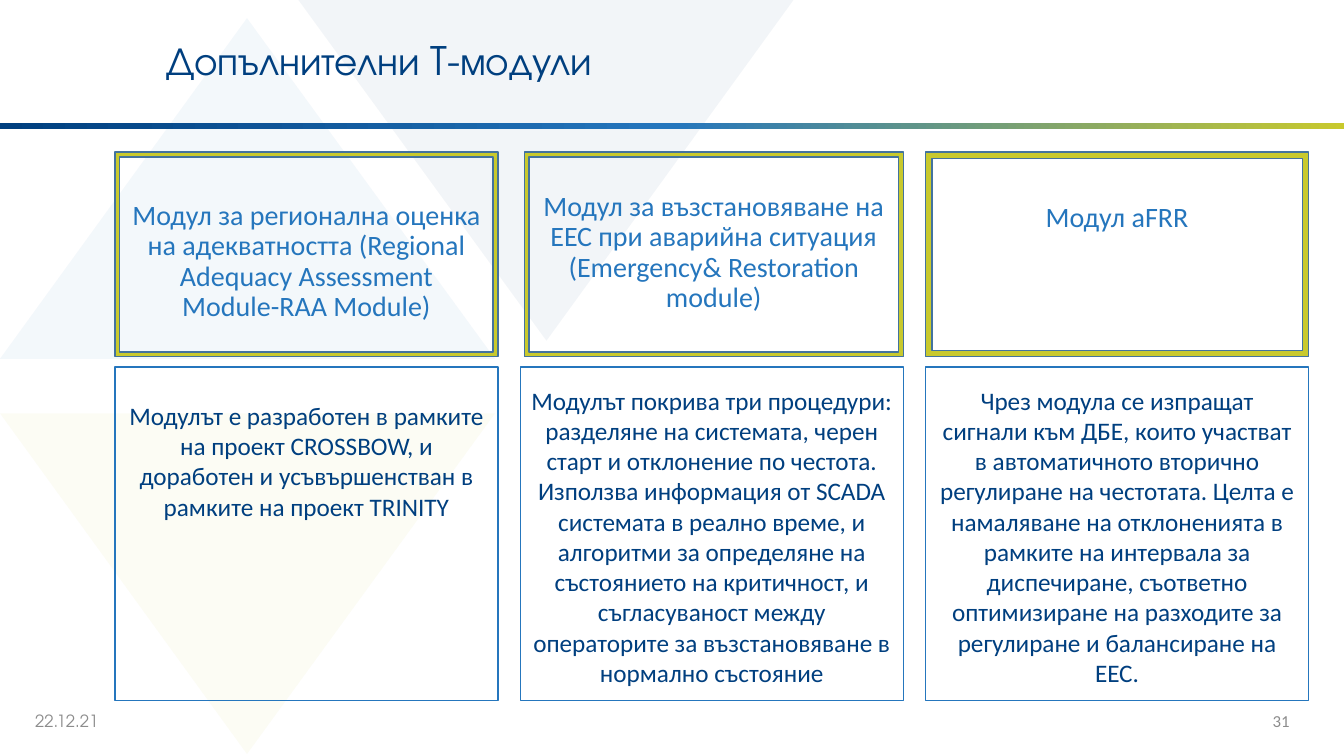
"""Build the slide on additional T-modules: three framed headings over three descriptions."""
from lxml.etree import SubElement
from pptx import Presentation
from pptx.dml.color import RGBColor
from pptx.enum.shapes import MSO_SHAPE as SHAPE
from pptx.enum.text import MSO_ANCHOR as ANCHOR, PP_ALIGN as ALIGN
from pptx.oxml.ns import qn
from pptx.util import Inches, Pt

NAVY = RGBColor(0x00, 0x3F, 0x7F)
BLUE = RGBColor(0x25, 0x76, 0xBD)
LIME = RGBColor(0xC8, 0xC9, 0x2D)
STEEL = RGBColor(0x43, 0x73, 0x9E)
GRAY = RGBColor(0x8C, 0x8C, 0x8C)
SANS, DISPLAY = "Calibri", "TeX Gyre Adventor"

TRIANGLES = [
    ([(2.45, 0.18), (4.91, 3.56), (0, 3.56)], BLUE),
    ([(5.42, 3.38), (2.96, 0), (7.87, 0)], NAVY),
    ([(2.45, 7.48), (0, 4.1), (4.91, 4.1)], LIME),
]

# Each module: left, width, frame thickness, heading, its inset, description, its inset
MODULES = [
    (1.14, 3.8, 0.024,
     "Модул за регионална оценка на адекватността (Regional Adequacy Assessment "
     "Module-RAA Мodule)", 0.44,
     "Модулът е разработен в рамките на проект CROSSBOW, и доработен и "
     "усъвършенстван в рамките на проект TRINITY", 0.33),
    (5.2, 3.76, 0.024,
     "Модул за възстановяване на ЕЕС при аварийна ситуация (Emergency& Restoration "
     "module)", 0.35,
     "Mодулът покрива три процедури: разделяне на системата, черен старт и "
     "отклонение по честота. Използва информация от SCADA системата в реално време, "
     "и алгоритми за определяне на състоянието на критичност, и съгласуваност между "
     "операторите за възстановяване в нормално състояние", 0.18),
    (9.18, 3.8, 0.031, "Модул aFRR", 0.44,
     "Чрез модула се изпращат сигнали към ДБЕ, които участват в автоматичното "
     "вторично регулиране на честотата. Целта е намаляване на отклоненията в рамките "
     "на интервала за диспечиране, съответно оптимизиране на разходите за регулиране "
     "и балансиране на ЕЕС.", 0.18),
]
BODY_WIDTH = 3.8


def write(sp, text, size, color, font=SANS, align=ALIGN.LEFT, anchor=ANCHOR.MIDDLE,
          spacing=1.0):
    tf = sp.text_frame
    tf.word_wrap = True
    tf.vertical_anchor = anchor
    p = tf.paragraphs[0]
    p.text = text
    p.alignment = align
    p.line_spacing = spacing
    p.space_before = Pt(0)
    p.font.size, p.font.name = Pt(size), font
    p.font.color.rgb = color


def add_triangle(s, points, color):
    corners = [(Inches(x), Inches(y)) for x, y in points]
    builder = s.shapes.build_freeform(*corners[0])
    builder.add_line_segments(corners[1:], close=True)
    sp = builder.convert_to_shape()
    sp.shadow.inherit = False
    sp.line.fill.background()
    sp.fill.solid()
    sp.fill.fore_color.rgb = color
    srgb = sp.fill._xPr.find(".//" + qn("a:srgbClr"))
    SubElement(srgb, qn("a:alpha"), val="5000")


def add_gradient_bar(s):
    sp = s.shapes.add_shape(SHAPE.RECTANGLE, 0, Inches(1.22), Inches(13.33), Inches(0.06))
    sp.shadow.inherit = False
    sp.line.fill.background()
    sp.fill.gradient()
    sp.fill.gradient_angle = 0
    stops = sp.element.spPr.find(".//" + qn("a:gsLst"))
    for stop in list(stops):
        stops.remove(stop)
    for pos, color in ((0, NAVY), (50000, BLUE), (100000, LIME)):
        stop = SubElement(stops, qn("a:gs"), pos=str(pos))
        SubElement(stop, qn("a:srgbClr"), val=str(color))


def add_title(s, text):
    title = s.shapes.title
    title.left, title.top = Inches(1.14), Inches(0.27)
    title.width, title.height = Inches(10.36), Inches(0.7)
    title.text_frame.margin_left = Inches(0.51)
    write(title, text, 28, NAVY, DISPLAY, spacing=0.9)
    title.element.getparent().append(title.element)


def add_footer(s, left, text, font, align):
    sp = s.shapes.add_textbox(Inches(left), Inches(6.95), Inches(3), Inches(0.4))
    write(sp, text, 12, GRAY, font, align)


def add_box(s, kind, left, top, width, height, line, inset):
    sp = s.shapes.add_shape(kind, Inches(left), Inches(top), Inches(width), Inches(height))
    sp.shadow.inherit = False
    sp.fill.background()
    sp.line.color.rgb = line
    sp.line.width = Pt(1)
    sp.text_frame.margin_top = Inches(inset)
    return sp


def add_module(s, left, width, thickness, heading, heading_inset, body, body_inset):
    frame = add_box(s, SHAPE.FRAME, left, 1.51, width, 2.03, STEEL, heading_inset)
    frame.adjustments[0] = thickness
    frame.fill.solid()
    frame.fill.fore_color.rgb = LIME
    write(frame, heading, 20, BLUE, align=ALIGN.CENTER, anchor=ANCHOR.TOP, spacing=0.9)
    box = add_box(s, SHAPE.FLOWCHART_PROCESS, left + width - BODY_WIDTH, 3.64,
                  BODY_WIDTH, 3.31, BLUE, body_inset)
    write(box, body, 18, NAVY, align=ALIGN.CENTER, anchor=ANCHOR.TOP)


def main():
    prs = Presentation()
    prs.slide_width, prs.slide_height = Inches(13.33), Inches(7.5)
    s = prs.slides.add_slide(prs.slide_layouts[5])
    for points, color in TRIANGLES:
        add_triangle(s, points, color)
    add_gradient_bar(s)
    add_title(s, "Допълнителни T-модули")
    add_footer(s, 0.25, "22.12.21", DISPLAY, ALIGN.LEFT)
    add_footer(s, 9.89, "31", SANS, ALIGN.RIGHT)
    for module in MODULES:
        add_module(s, *module)
    prs.save("out.pptx")


if __name__ == "__main__":
    main()
